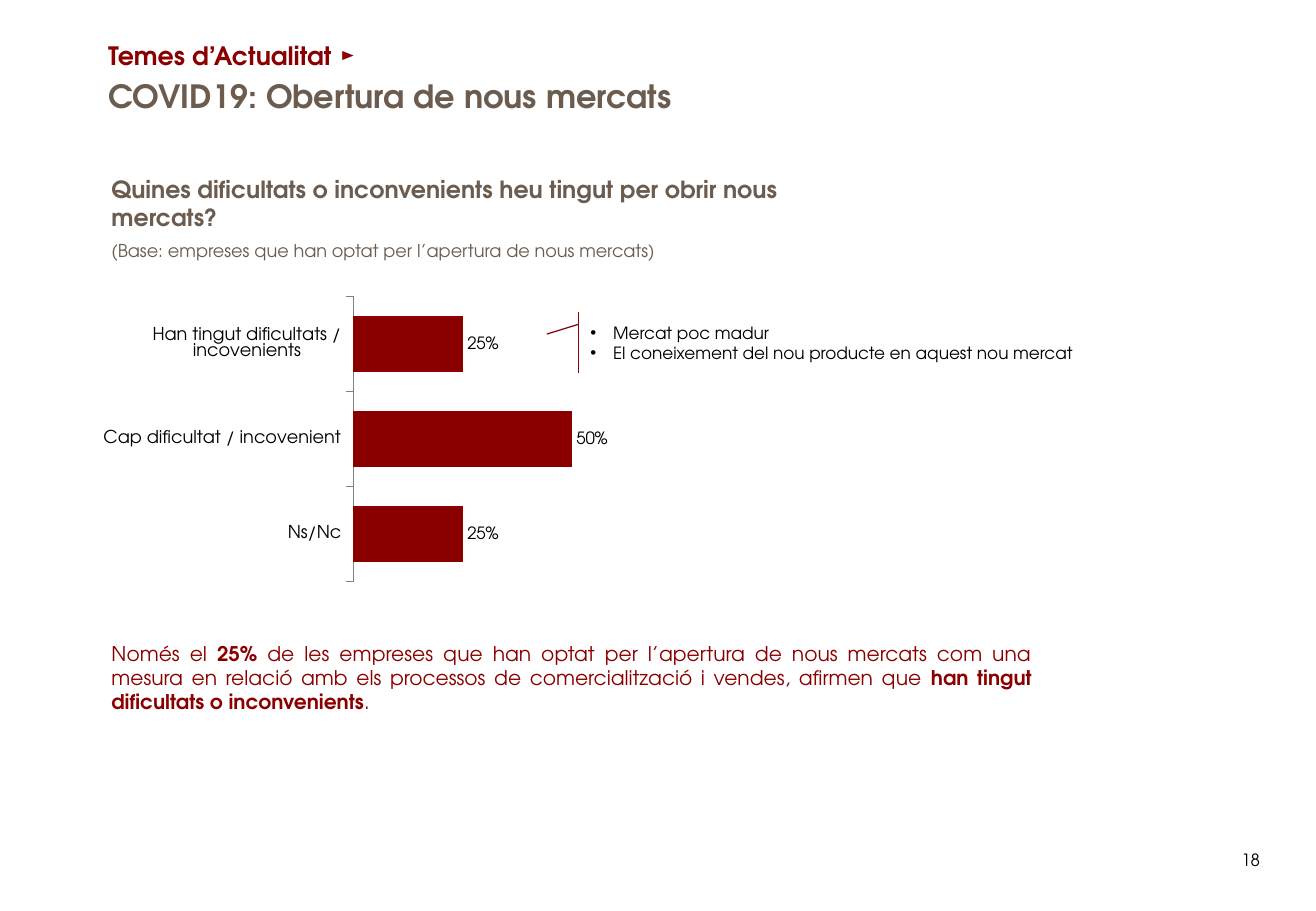
from lxml import etree
from pptx import Presentation
from pptx.chart.data import CategoryChartData
from pptx.dml.color import RGBColor
from pptx.enum.chart import XL_CHART_TYPE, XL_LABEL_POSITION, XL_TICK_LABEL_POSITION, XL_TICK_MARK
from pptx.enum.shapes import MSO_SHAPE
from pptx.enum.text import MSO_ANCHOR, PP_ALIGN
from pptx.oxml import parse_xml
from pptx.oxml.ns import nsdecls, qn
from pptx.util import Cm, Pt

FONT = "TeX Gyre Adventor"
RED = RGBColor(0x8A, 0x00, 0x00)
BROWN = RGBColor(0x6B, 0x5C, 0x4F)
BLACK = RGBColor(0x00, 0x00, 0x00)
GREY = RGBColor(0x80, 0x80, 0x80)

BAR_CLUSTERED = XL_CHART_TYPE.BAR_CLUSTERED
OUTSIDE_END = XL_LABEL_POSITION.OUTSIDE_END
LABELS_LOW = XL_TICK_LABEL_POSITION.LOW
TICK_OUTSIDE = XL_TICK_MARK.OUTSIDE
ACCENT_CALLOUT = MSO_SHAPE.LINE_CALLOUT_1_ACCENT_BAR
TOP, MIDDLE = MSO_ANCHOR.TOP, MSO_ANCHOR.MIDDLE
LEFT, JUSTIFY = PP_ALIGN.LEFT, PP_ALIGN.JUSTIFY


def style_font(font, size, color, bold=False):
    font.name = FONT
    font.size = Pt(size)
    font.bold = bold
    font.color.rgb = color


def write_runs(paragraph, pieces, size, color):
    """Write (text, bold) pieces as the runs of a paragraph."""
    for text, bold in pieces:
        run = paragraph.add_run()
        run.text = text
        style_font(run.font, size, color, bold)


def add_text(slide, box, pieces, size, color, anchor=TOP):
    """Add a wrapped text box and return its text frame."""
    text_frame = slide.shapes.add_textbox(*map(Cm, box)).text_frame
    text_frame.word_wrap = True
    text_frame.vertical_anchor = anchor
    write_runs(text_frame.paragraphs[0], pieces, size, color)
    return text_frame


def set_plot_layout(chart, x, y, width, height):
    """Fix the inner plot area as fractions of the chart."""
    plot_area = chart._chartSpace.chart.plotArea
    for layout in plot_area.findall(qn("c:layout")):
        plot_area.remove(layout)
    sizes = "".join(f'<c:{tag} val="{value}"/>' for tag, value in
                    (("x", x), ("y", y), ("w", width), ("h", height)))
    plot_area.insert(0, parse_xml(
        f'<c:layout {nsdecls("c")}><c:manualLayout><c:layoutTarget val="inner"/>'
        f'<c:xMode val="edge"/><c:yMode val="edge"/>{sizes}'
        f'</c:manualLayout></c:layout>'))


def add_bar_chart(slide, box, answers):
    data = CategoryChartData(number_format="0%")
    data.categories = list(answers)
    data.add_series("Empreses", list(answers.values()))
    chart = slide.shapes.add_chart(BAR_CLUSTERED, *map(Cm, box), data).chart
    chart.has_legend = False
    chart.has_title = False
    style_font(chart.font, 10, BLACK)
    set_plot_layout(chart, 0.39, 0.05, 0.55, 0.9)

    # Axes
    category_axis = chart.category_axis
    category_axis.reverse_order = True
    category_axis.has_major_gridlines = False
    category_axis.major_tick_mark = TICK_OUTSIDE
    category_axis.tick_label_position = LABELS_LOW
    category_axis.format.line.color.rgb = GREY
    style_font(category_axis.tick_labels.font, 10.5, BLACK)
    value_axis = chart.value_axis
    value_axis.minimum_scale = 0
    value_axis.maximum_scale = 0.82
    value_axis.has_major_gridlines = False
    value_axis.visible = False

    # Bars and their labels
    plot = chart.plots[0]
    plot.gap_width = 70
    plot.vary_by_categories = False
    fill = plot.series[0].format.fill
    fill.solid()
    fill.fore_color.rgb = RED
    plot.has_data_labels = True
    labels = plot.data_labels
    labels.show_value = True
    labels.number_format = "0%"
    labels.number_format_is_linked = False
    labels.position = OUTSIDE_END
    style_font(labels.font, 10, BLACK)


def add_bullet(paragraph, indent):
    properties = paragraph._p.get_or_add_pPr()
    properties.set("marL", str(indent))
    properties.set("indent", str(-indent))
    etree.SubElement(properties, qn("a:buFont")).set("typeface", "Arial")
    etree.SubElement(properties, qn("a:buChar")).set("char", "•")


def add_callout(slide, box, pointer, items):
    """Add a bulleted callout with an accent bar and a pointer line."""
    shape = slide.shapes.add_shape(ACCENT_CALLOUT, *map(Cm, box))
    for index, value in enumerate(pointer):
        shape.adjustments[index] = value
    shape.shadow.inherit = False
    shape.fill.background()
    shape.line.color.rgb = RED
    shape.line.width = Pt(0.75)
    text_frame = shape.text_frame
    text_frame.word_wrap = True
    text_frame.vertical_anchor = MIDDLE
    text_frame.text = "\n".join(items)
    for paragraph in text_frame.paragraphs:
        paragraph.alignment = LEFT
        add_bullet(paragraph, Cm(0.48))
        style_font(paragraph.runs[0].font, 10, BLACK)


def main():
    presentation = Presentation()
    presentation.slide_width = Cm(27.51)
    presentation.slide_height = Cm(19.05)
    slide = presentation.slides.add_slide(presentation.slide_layouts[6])

    # Headings
    add_text(slide, (2.01, 0.71, 24.28, 0.91),
             [("Temes d’Actualitat ►", True)], 15, RED, MIDDLE)
    add_text(slide, (2.01, 1.6, 20.19, 0.79),
             [("COVID19: Obertura de nous mercats", True)], 19, BROWN, MIDDLE)

    # Survey question and its base
    question = add_text(
        slide, (2.08, 3.53, 14.61, 2.13),
        [("Quines dificultats o inconvenients heu tingut per obrir nous mercats?", True)],
        14, BROWN)
    base = question.add_paragraph()
    base.space_before = Pt(5)
    write_runs(base, [("(Base: empreses que han optat per l’apertura de nous mercats)", False)],
               10.5, BROWN)

    # Answers and the difficulties named
    add_bar_chart(slide, (2.08, 5.87, 13.61, 6.63), {
        "Han tingut dificultats / incovenients": 0.25,
        "Cap dificultat / incovenient": 0.5,
        "Ns/Nc": 0.25,
    })
    add_callout(slide, (12.09, 6.53, 11, 1.27), (0.2, 0, 0.36, -0.06), [
        "Mercat poc madur",
        "El coneixement del nou producte en aquest nou mercat",
    ])

    # Conclusion
    conclusion = add_text(slide, (2.08, 13.28, 19.74, 1.8), [
        ("Només el ", False),
        ("25%", True),
        (" de les empreses que han optat per l’apertura de nous mercats com una mesura "
         "en relació amb els processos de comercialització i vendes, afirmen que ", False),
        ("han tingut dificultats o inconvenients", True),
        (".", False),
    ], 12, RED)
    conclusion.paragraphs[0].alignment = JUSTIFY

    # Page number
    add_text(slide, (25.7, 17.65, 1.7, 1.02), [("18", False)], 10, BLACK)

    presentation.save("out.pptx")


if __name__ == "__main__":
    main()
